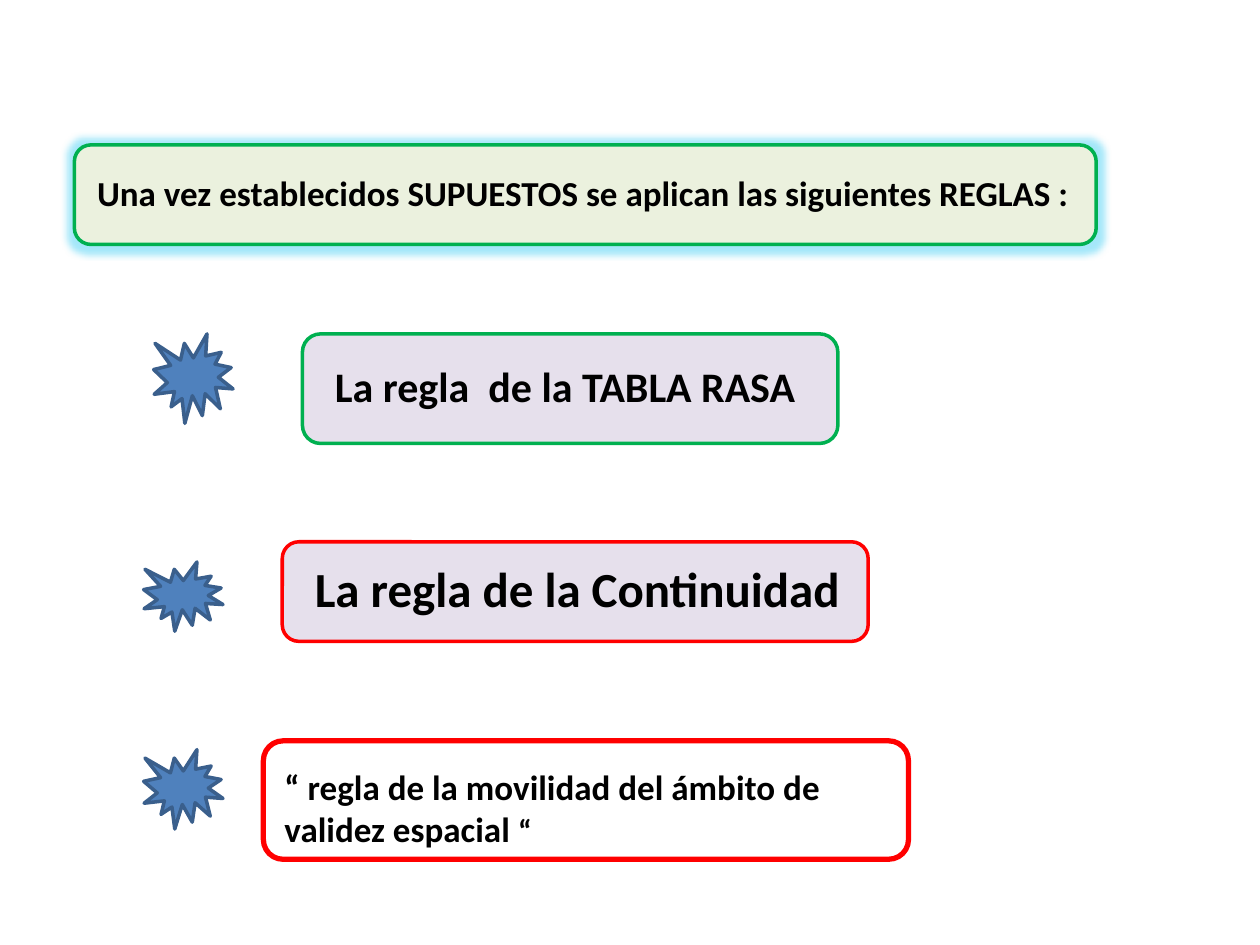
"""Build the slide that lists the three rules under a glowing heading."""
from lxml.etree import SubElement
from pptx import Presentation
from pptx.dml.color import RGBColor
from pptx.enum.shapes import MSO_SHAPE as SHAPE
from pptx.enum.text import MSO_ANCHOR, MSO_AUTO_SIZE, PP_ALIGN
from pptx.oxml.ns import qn
from pptx.util import Inches, Pt


def add_shape(kind, at, fill, line, width=2):
    sp = slide.shapes.add_shape(kind, *map(Inches, at))
    sp.shadow.inherit = False
    if fill:
        sp.fill.solid()
        sp.fill.fore_color.rgb = RGBColor.from_string(fill)
    else:
        sp.fill.background()
    sp.line.color.rgb = RGBColor.from_string(line)
    sp.line.width = Pt(width)
    return sp


def write(sp, at, runs, wrap=False):
    sp.left, sp.top, sp.width, sp.height = map(Inches, at)
    tf = sp.text_frame
    tf.word_wrap = wrap
    tf.auto_size = MSO_AUTO_SIZE.SHAPE_TO_FIT_TEXT
    tf.vertical_anchor = MSO_ANCHOR.TOP
    p = tf.paragraphs[0]
    p.alignment = PP_ALIGN.LEFT
    for text, size in runs:
        r = p.add_run()
        r.text = text
        r.font.name = "Calibri"
        r.font.size = Pt(size)
        r.font.bold = True
        r.font.color.rgb = RGBColor.from_string("000000")


prs = Presentation()
prs.slide_width, prs.slide_height = Inches(10), Inches(7.5)
slide = prs.slides.add_slide(prs.slide_layouts[5])

heading = add_shape(SHAPE.ROUNDED_RECTANGLE, (0.59, 1.15, 8.11, 0.79), "EBF1DE", "00B050")
effects = heading._element.spPr.find(qn("a:effectLst"))
glow = SubElement(effects, qn("a:glow"), rad=str(Pt(8)))
color = SubElement(glow, qn("a:srgbClr"), val="1FC5F2")
SubElement(color, qn("a:alpha"), val="40000")

title = slide.shapes.title
slide.shapes._spTree.append(title._element)
write(title, (0.67, 1.31, 7.98, 0.44),
      [("Una vez establecidos SUPUESTOS se aplican las siguientes REGLAS :", 20)])

rules = [
    ((2.4, 2.65, 4.25, 0.87), "E6E0EC", "00B050", 2, (1.22, 2.65, 0.63, 0.71),
     (2.56, 2.81, 3.89, 0.51), [("La regla  de la TABLA RASA", 24)], False),
    ((2.24, 4.3, 4.65, 0.79), "E6E0EC", "FF0000", 2, (1.14, 4.46, 0.63, 0.55),
     (2.4, 4.38, 4.42, 0.57), [("La regla de la Continuidad", 28)], False),
    ((2.09, 5.88, 5.12, 0.94), None, "FF0000", 3, (1.14, 5.95, 0.63, 0.63),
     (2.16, 6.03, 5, 0.77),
     [("“ regla de la movilidad del ámbito de validez espacial ", 20), ("“", 18)], True),
]
for box, fill, line, width, star, text_at, runs, wrap in rules:
    add_shape(SHAPE.ROUNDED_RECTANGLE, box, fill, line, width)
    add_shape(SHAPE.EXPLOSION1, star, "4F81BD", "3A5F8C")
    write(slide.shapes.add_textbox(0, 0, 0, 0), text_at, runs, wrap)

prs.save("out.pptx")
